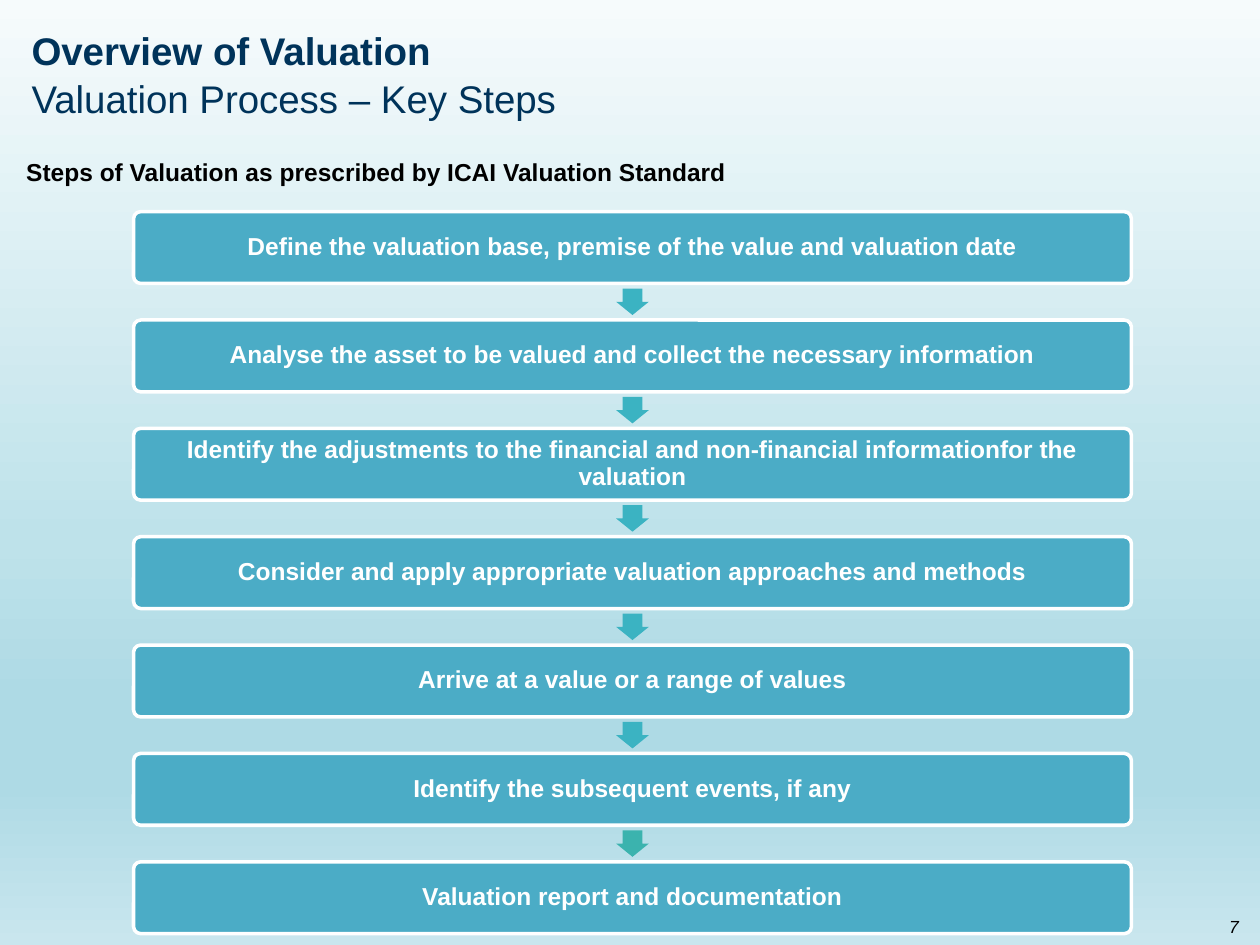
from lxml import etree
from pptx import Presentation
from pptx.dml.color import RGBColor
from pptx.enum import shapes, text
from pptx.oxml import ns
from pptx.util import Inches, Pt

TITLE = [("Overview of Valuation", True), ("Valuation Process – Key Steps", False)]
SUBHEAD = "Steps of Valuation as prescribed by ICAI Valuation Standard"
STEPS = [
    "Define the valuation base, premise of the value and valuation date",
    "Analyse the asset to be valued and collect the necessary information",
    "Identify the adjustments to the financial and non-financial informationfor the valuation",
    "Consider and apply appropriate valuation approaches and methods",
    "Arrive at a value or a range of values",
    "Identify the subsequent events, if any",
    "Valuation report and documentation",
]
PAGE = "7"
BACKGROUND = [(0, "F6FBFC"), (57, "BEE2EA"), (74, "AEDAE5"), (83, "AEDAE5"), (100, "C9E6EE")]

NAVY = RGBColor(0x00, 0x33, 0x5A)
BLACK = RGBColor(0, 0, 0)
WHITE = RGBColor(0xFF, 0xFF, 0xFF)
BLUE = RGBColor(0x4B, 0xAC, 0xC6)
TEAL = RGBColor(0x3B, 0xB3, 0xC2)
GREEN = RGBColor(0x3B, 0xB3, 0xAE)

LEFT, TOP, WIDTH, HEIGHT, PITCH = 1.06, 1.68, 7.92, 0.57, 0.86
ARROW_W, ARROW_H = 0.26, 0.21


def style(p, size, color, bold=False, italic=False):
    for r in p.runs:
        f = r.font
        f.name, f.size, f.bold, f.italic = "Arial", Pt(size), bold, italic
        f.color.rgb = color


def add_text(s, box, words, size, **look):
    tf = s.shapes.add_textbox(*map(Inches, box)).text_frame
    tf.word_wrap = True
    tf.text = words
    style(tf.paragraphs[0], size, BLACK, **look)
    return tf


def add_shape(s, kind, box, fill, adjustments):
    sp = s.shapes.add_shape(kind, *map(Inches, box))
    sp.shadow.inherit = False
    sp.fill.solid()
    sp.fill.fore_color.rgb = fill
    sp.line.fill.background()
    for i, value in enumerate(adjustments):
        sp.adjustments[i] = value
    return sp


def add_step(s, box, words):
    sp = add_shape(s, shapes.MSO_SHAPE.ROUNDED_RECTANGLE, box, BLUE, [0.1])
    sp.line.color.rgb = WHITE
    sp.line.width = Pt(2)
    tf = sp.text_frame
    tf.word_wrap = True
    tf.vertical_anchor = text.MSO_ANCHOR.MIDDLE
    tf.margin_left = tf.margin_right = Inches(0.08)
    tf.margin_top = tf.margin_bottom = Inches(0.06)
    tf.text = words
    p = tf.paragraphs[0]
    p.alignment = text.PP_ALIGN.CENTER
    p.line_spacing = 0.9
    style(p, 14, WHITE, bold=True)


def paint_background(s):
    fill = s.background.fill
    fill.gradient()
    fill.gradient_angle = 270
    stops = next(s.element.iter(ns.qn("a:gsLst")))
    for gs in list(stops):
        stops.remove(gs)
    for position, color in BACKGROUND:
        gs = etree.SubElement(stops, ns.qn("a:gs"), pos=str(position * 1000))
        etree.SubElement(gs, ns.qn("a:srgbClr"), val=color)


def add_title(s):
    sp = s.shapes.title
    sp.left, sp.top, sp.width, sp.height = map(Inches, (0.15, 0.04, 9.69, 1.1))
    tf = sp.text_frame
    tf.vertical_anchor = text.MSO_ANCHOR.MIDDLE
    tf.auto_size = text.MSO_AUTO_SIZE.NONE
    tf.text = "\n".join(words for words, _ in TITLE)
    for p, (_, bold) in zip(tf.paragraphs, TITLE):
        p.alignment = text.PP_ALIGN.LEFT
        style(p, 22, NAVY, bold=bold)
    tf.paragraphs[1].space_before = Pt(1)


def main():
    prs = Presentation()
    prs.slide_width, prs.slide_height = Inches(10), Inches(7.5)
    s = prs.slides.add_slide(prs.slide_layouts[5])
    paint_background(s)
    add_title(s)
    add_text(s, (0.11, 1.2, 6.37, 0.34), SUBHEAD, 14, bold=True)

    arrow_left = LEFT + (WIDTH - ARROW_W) / 2
    arrow_gap = (PITCH - HEIGHT - ARROW_H) / 2
    last = len(STEPS) - 1
    for i, words in enumerate(STEPS):
        top = TOP + i * PITCH
        add_step(s, (LEFT, top, WIDTH, HEIGHT), words)
        if i < last:
            box = (arrow_left, top + HEIGHT + arrow_gap, ARROW_W, ARROW_H)
            color = GREEN if i == last - 1 else TEAL
            add_shape(s, shapes.MSO_SHAPE.DOWN_ARROW, box, color, [0.6, 0.5])

    tf = add_text(s, (7.6, 7.15, 2.33, 0.4), PAGE, 10, italic=True)
    tf.vertical_anchor = text.MSO_ANCHOR.MIDDLE
    tf.paragraphs[0].alignment = text.PP_ALIGN.RIGHT
    prs.save("out.pptx")


if __name__ == "__main__":
    main()
